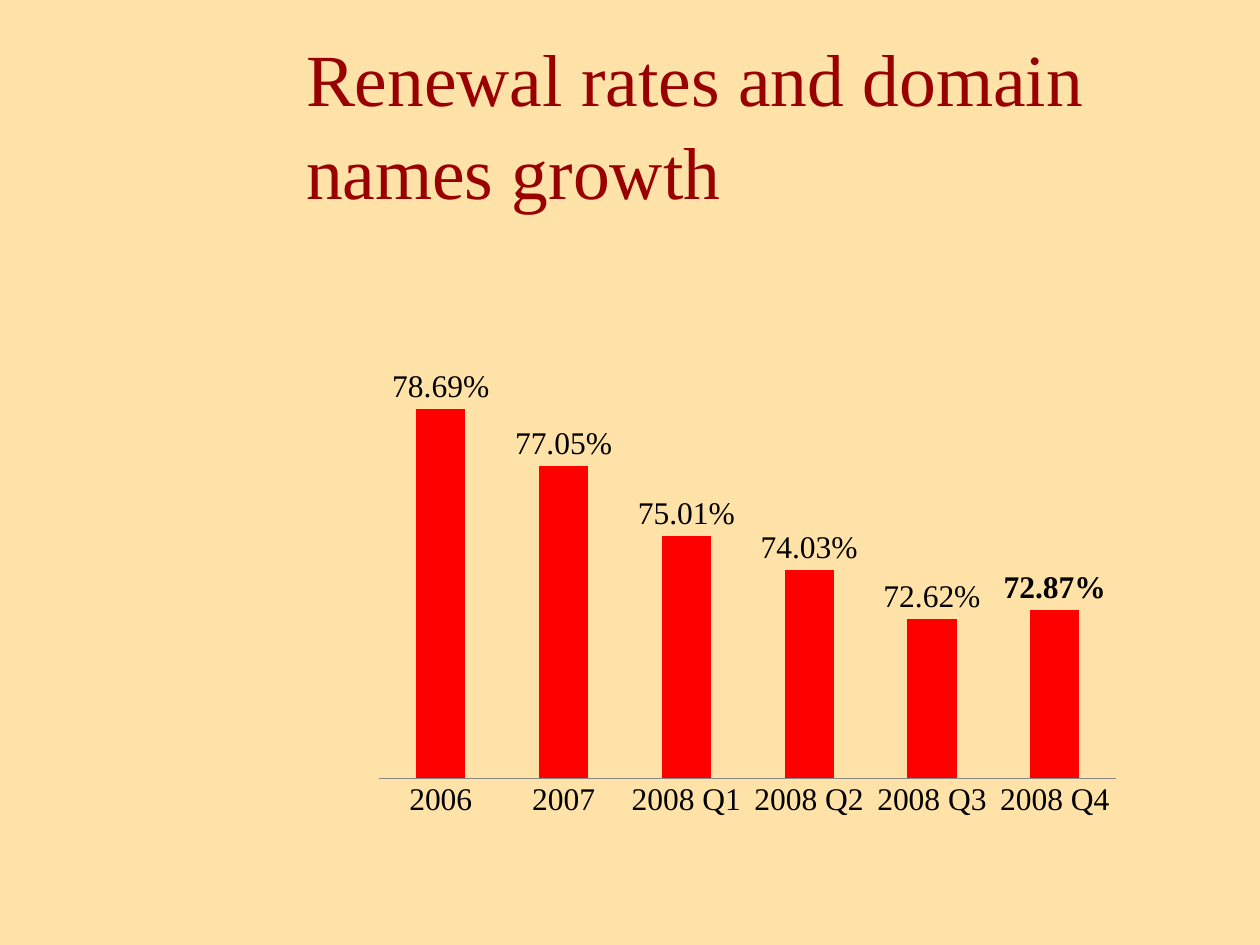
from pptx import Presentation
from pptx.chart.data import CategoryChartData
from pptx.dml.color import RGBColor
from pptx.enum.chart import XL_CHART_TYPE, XL_LABEL_POSITION, XL_TICK_MARK
from pptx.enum.text import MSO_ANCHOR
from pptx.util import Cm, Pt

COLUMNS = XL_CHART_TYPE.COLUMN_CLUSTERED
OUTSIDE = XL_LABEL_POSITION.OUTSIDE_END
NO_TICKS = XL_TICK_MARK.NONE
MIDDLE = MSO_ANCHOR.MIDDLE

CREAM = RGBColor(0xFF, 0xE2, 0xA7)
MAROON = RGBColor(0x99, 0x00, 0x00)
RED = RGBColor(0xFF, 0x00, 0x00)
BLACK = RGBColor(0x00, 0x00, 0x00)
GRAY = RGBColor(0x86, 0x86, 0x86)
FONT = "Times New Roman"
PERCENT = "0.00%"

TITLE = "Renewal rates and domain names growth"
RENEWAL_RATES = {
    "2006": 0.7869,
    "2007": 0.7705,
    "2008 Q1": 0.7501,
    "2008 Q2": 0.7403,
    "2008 Q3": 0.7262,
    "2008 Q4": 0.7287,
}
TITLE_AREA = (5.92, 0.76, 18.85, 3.18)
CHART_AREA = (7.34, 7.14, 15.47, 9.53)


def style_font(font, size, color):
    font.name = FONT
    font.size = Pt(size)
    font.color.rgb = color


def add_rates_chart(page):
    data = CategoryChartData(number_format=PERCENT)
    data.categories = list(RENEWAL_RATES)
    data.add_series("Series 1", list(RENEWAL_RATES.values()))
    chart = page.shapes.add_chart(COLUMNS, *map(Cm, CHART_AREA), data).chart
    chart.has_legend = False
    chart.has_title = False
    style_font(chart.font, 18, BLACK)

    rate_axis = chart.value_axis
    rate_axis.visible = False
    rate_axis.has_major_gridlines = False
    rate_axis.minimum_scale = 0.68
    rate_axis.maximum_scale = 0.8
    rate_axis.tick_labels.number_format = PERCENT
    rate_axis.tick_labels.number_format_is_linked = False

    period_axis = chart.category_axis
    period_axis.major_tick_mark = NO_TICKS
    period_axis.format.line.color.rgb = GRAY

    plot = chart.plots[0]
    plot.vary_by_categories = False
    plot.gap_width = 150
    plot.overlap = -25
    series = plot.series[0]
    series.format.fill.solid()
    series.format.fill.fore_color.rgb = RED

    labels = series.data_labels
    labels.show_value = True
    labels.number_format = PERCENT
    labels.number_format_is_linked = False
    labels.position = OUTSIDE
    style_font(labels.font, 18, BLACK)
    latest = series.points[len(RENEWAL_RATES) - 1].data_label
    style_font(latest.font, 18, BLACK)
    latest.font.bold = True
    latest.position = OUTSIDE


def add_title(page):
    box = page.shapes.add_textbox(*map(Cm, TITLE_AREA))
    frame = box.text_frame
    frame.word_wrap = True
    frame.vertical_anchor = MIDDLE
    frame.margin_top = Cm(0.33)
    para = frame.paragraphs[0]
    para.text = TITLE
    para.line_spacing = 1.05
    style_font(para.font, 42, MAROON)


def main():
    deck = Presentation()
    deck.slide_width, deck.slide_height = Cm(25.4), Cm(19.05)
    page = deck.slides.add_slide(deck.slide_layouts[6])
    page.background.fill.solid()
    page.background.fill.fore_color.rgb = CREAM
    add_rates_chart(page)
    add_title(page)
    deck.save("out.pptx")


if __name__ == "__main__":
    main()
